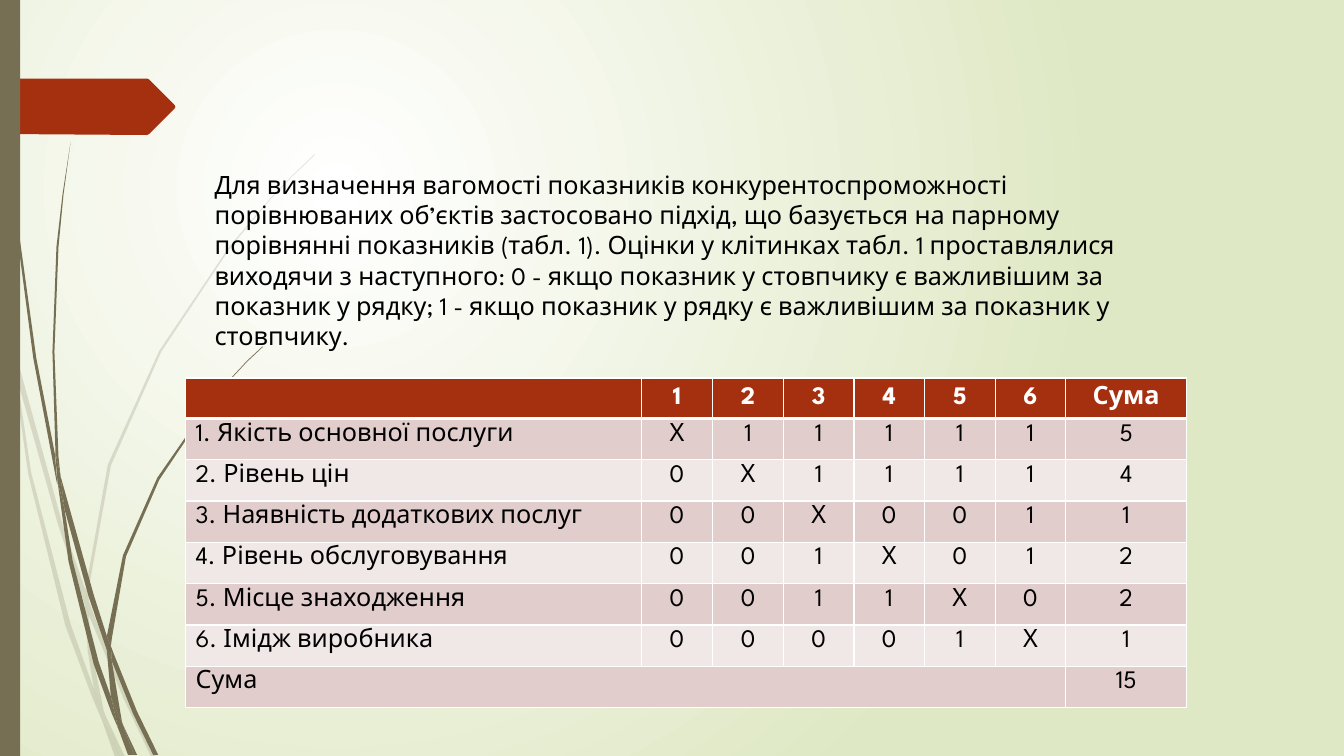
"""Build a slide with the pairwise comparison table of competitiveness indicators."""
from lxml.etree import SubElement
from pptx import Presentation
from pptx.dml.color import RGBColor
from pptx.enum.shapes import MSO_SHAPE
from pptx.enum.text import MSO_ANCHOR, MSO_AUTO_SIZE, PP_ALIGN
from pptx.oxml.ns import qn
from pptx.util import Pt

PX = 9144
THEME = {
    "font": "League Spartan", "size": 18, "text": "000000", "white": "FFFFFF",
    "background": "DFE8C4", "grass": "766F54", "accent": "A53010",
    "bands": ["E1CDCC", "F0E8E7"], "pale_alpha": 20000,
}

PALE_GRASS = [
    [(11, 350), (9, 322), (0, 282), (0, 299), (10, 344)],
    [(58, 522), (84, 599), (85, 586), (62, 520), (14, 345), (17, 376)],
    [(92, 607), (88, 596), (88, 610), (123, 694), (150, 751), (155, 751), (127, 692)],
    [(119, 751), (124, 751), (105, 711)],
    [(93, 683), (70, 619), (31, 469), (17, 376), (11, 350), (28, 470), (65, 621),
     (92, 693), (101, 714), (99, 707)],
    [(84, 599), (87, 646), (93, 683), (96, 692), (105, 711), (103, 706), (91, 646),
     (88, 610), (88, 608)],
    [(88, 584), (110, 462), (160, 349), (229, 245), (268, 198), (290, 175), (312, 154),
     (312, 153), (289, 175), (268, 197), (228, 244), (158, 348), (107, 461), (85, 584),
     (85, 586), (88, 596)],
    [(101, 714), (114, 751), (119, 751)],
    [(88, 608), (88, 610), (88, 596), (85, 586), (84, 599)],
    [(96, 692), (93, 683), (99, 707), (101, 714), (119, 751), (105, 711)],
]
DARK_GRASS = [
    [(7, 110), (17, 233), (33, 355), (56, 477), (57, 481), (55, 457), (55, 453),
     (36, 355), (19, 232), (8, 109), (5, 48), (4, 0), (3, 0), (4, 48)],
    [(88, 592), (106, 645), (106, 633), (106, 631), (93, 590), (60, 472), (64, 505)],
    [(113, 649), (110, 641), (111, 656), (132, 708), (152, 749), (157, 749), (136, 706)],
    [(110, 691), (98, 657), (72, 556), (64, 505), (57, 477), (68, 557), (93, 659),
     (111, 708), (117, 722), (116, 717)],
    [(60, 472), (58, 453), (54, 349), (58, 245), (63, 193), (70, 141), (62, 193),
     (56, 245), (52, 349), (55, 449)],
    [(133, 749), (136, 749), (122, 719)],
    [(57, 477), (64, 505), (60, 472), (55, 449), (55, 453)],
    [(111, 633), (125, 552), (158, 476), (205, 406), (231, 374), (245, 359), (261, 344),
     (260, 344), (245, 358), (231, 373), (204, 405), (156, 474), (122, 551), (106, 631),
     (110, 641)],
    [(117, 722), (127, 749), (131, 749)],
    [(106, 645), (110, 691), (116, 706), (122, 719), (121, 716), (111, 656), (109, 651)],
    [(106, 645), (109, 651), (111, 656), (110, 641), (106, 631), (106, 633)],
    [(116, 706), (110, 691), (116, 717), (117, 722), (130, 749), (133, 749), (122, 719)],
]
ARROW = [(0, 78), (146, 78), (148, 79), (173, 104), (174, 106), (173, 108),
         (148, 133), (146, 134), (0, 133)]

INTRO = (
    "Для визначення вагомості показників конкурентоспроможності порівнюваних об’єктів "
    "застосовано підхід, що базується на парному порівнянні показників (табл. 1). "
    "Оцінки у клітинках табл. 1 проставлялися виходячи з наступного: "
    "0 - якщо показник у стовпчику є важливішим за показник у рядку; "
    "1 - якщо показник у рядку є важливішим за показник у стовпчику."
)
SCORES = [
    ("Якість основної послуги", "Х11111"),
    ("Рівень цін", "0Х1111"),
    ("Наявність додаткових послуг", "00Х001"),
    ("Рівень обслуговування", "001Х01"),
    ("Місце знаходження", "0011Х0"),
    ("Імідж виробника", "00001Х"),
]
COL_WIDTHS = [452, 71, 70, 70, 70, 70, 70, 120]
ROW_HEIGHTS = [23] + [41] * 7


def paint(sp, color):
    sp.shadow.inherit = False
    sp.fill.solid()
    sp.fill.fore_color.rgb = RGBColor.from_string(color)
    sp.line.fill.background()


def write(tf, text, color="text", bold=False, align=PP_ALIGN.LEFT):
    p = tf.paragraphs[0]
    p.alignment = align
    r = p.add_run()
    r.text = text
    for name, value in {"name": THEME["font"], "size": Pt(THEME["size"]), "bold": bold}.items():
        setattr(r.font, name, value)
    r.font.color.rgb = RGBColor.from_string(THEME[color])


prs = Presentation()
prs.slide_width, prs.slide_height = 1333 * PX, 750 * PX
s = prs.slides.add_slide(prs.slide_layouts[6])

fill = s.background.fill
fill.gradient()
for stop, color in zip(fill.gradient_stops, ("white", "background")):
    stop.color.rgb = RGBColor.from_string(THEME[color])
grad = s.element.find(".//" + qn("a:gradFill"))
grad.remove(grad.find(qn("a:lin")))
circle = SubElement(grad, qn("a:path"), {"path": "circle"})
SubElement(circle, qn("a:fillToRect"), {"l": "50000", "t": "50000", "r": "100000", "b": "100000"})

for outlines, color, alpha in (
    (PALE_GRASS, THEME["grass"], THEME["pale_alpha"]),
    (DARK_GRASS, THEME["grass"], None),
    ([ARROW], THEME["accent"], None),
):
    for points in outlines:
        outline = s.shapes.build_freeform(*points[0], scale=PX)
        outline.add_line_segments(points[1:], close=True)
        sp = outline.convert_to_shape()
        paint(sp, color)
        if alpha:
            rgb = sp.element.spPr.find(qn("a:solidFill")).find(qn("a:srgbClr"))
            SubElement(rgb, qn("a:alpha"), {"val": str(alpha)})

stripe = s.shapes.add_shape(MSO_SHAPE.RECTANGLE, 0, 0, 20 * PX, 750 * PX)
paint(stripe, THEME["grass"])

intro = s.shapes.add_textbox(203 * PX, 163 * PX, 954 * PX, 192 * PX)
tf = intro.text_frame
tf.word_wrap = True
tf.auto_size = MSO_AUTO_SIZE.SHAPE_TO_FIT_TEXT
write(tf, INTRO)

rows = [["", *"123456", "Сума"]]
for number, (label, marks) in enumerate(SCORES, 1):
    rows.append([f"{number}. {label}", *marks, str(marks.count("1"))])
total = sum(marks.count("1") for _, marks in SCORES)
rows.append(["Сума"] + [""] * 6 + [str(total)])

table = s.shapes.add_table(
    len(rows), len(COL_WIDTHS), 184 * PX, 375 * PX, sum(COL_WIDTHS) * PX, sum(ROW_HEIGHTS) * PX
).table
table.horz_banding = False
for column, width in zip(table.columns, COL_WIDTHS):
    column.width = width * PX
for row, height in zip(table.rows, ROW_HEIGHTS):
    row.height = height * PX
table.cell(7, 0).merge(table.cell(7, 6))

for i, texts in enumerate(rows):
    for j, text in enumerate(texts):
        cell = table.cell(i, j)
        tcPr = cell._tc.get_or_add_tcPr()
        for side in "LRTB":
            width = 3 if (i, side) in ((0, "B"), (1, "T")) else 1
            ln = SubElement(tcPr, qn(f"a:ln{side}"), {"w": str(Pt(width))})
            solid = SubElement(ln, qn("a:solidFill"))
            SubElement(solid, qn("a:srgbClr"), {"val": THEME["white"]})
        cell.fill.solid()
        band = THEME["bands"][(i - 1) % 2] if i else THEME["accent"]
        cell.fill.fore_color.rgb = RGBColor.from_string(band)
        cell.vertical_anchor = MSO_ANCHOR.TOP if i else MSO_ANCHOR.MIDDLE
        if text:
            write(cell.text_frame, text, "text" if i else "white", i == 0,
                  PP_ALIGN.CENTER if j else PP_ALIGN.LEFT)

prs.save("out.pptx")
